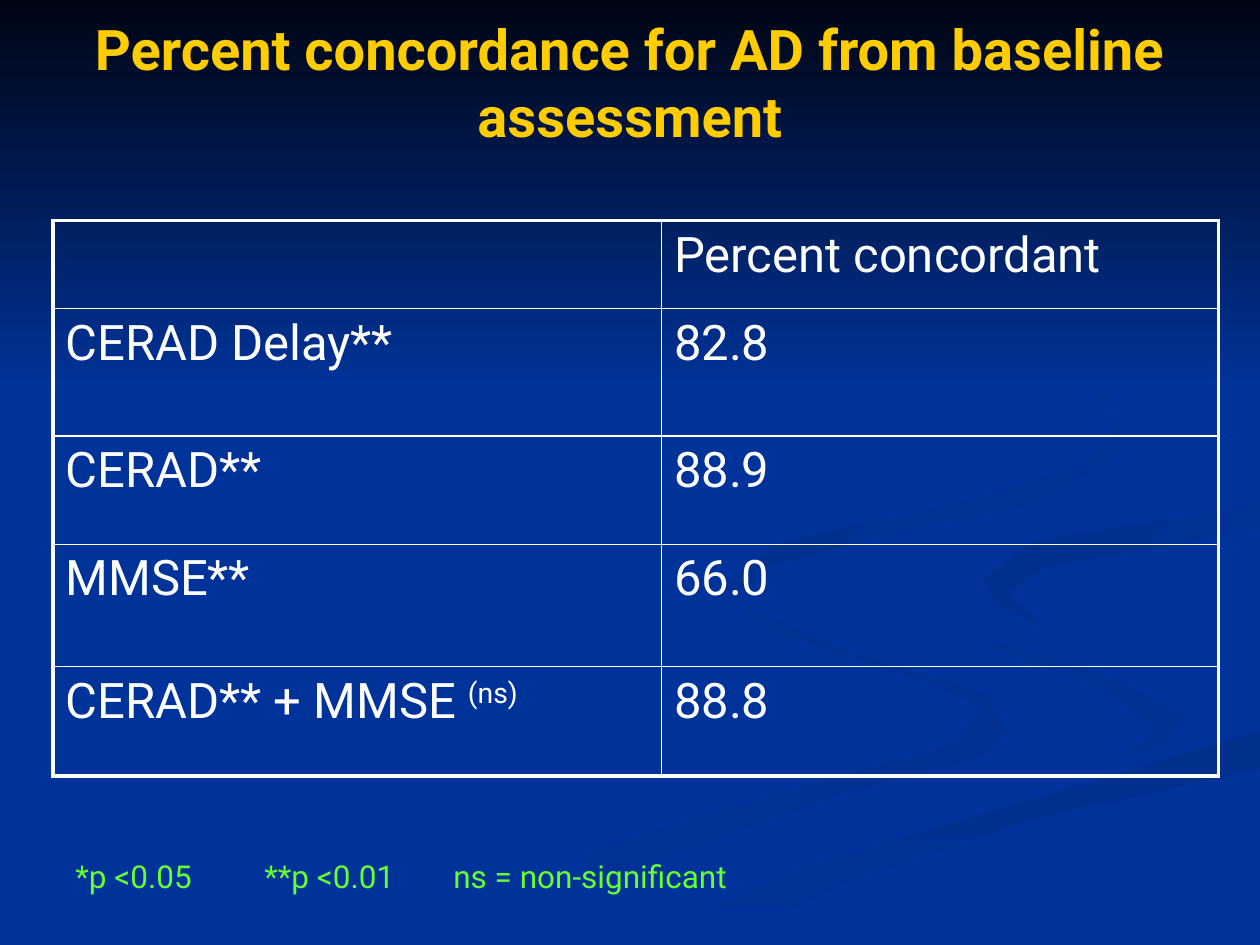
from lxml.etree import SubElement
from pptx import Presentation
from pptx.dml.color import RGBColor
from pptx.enum.text import MSO_ANCHOR, PP_ALIGN
from pptx.oxml.ns import qn
from pptx.util import Inches, Pt

NAVY = RGBColor(0x00, 0x33, 0x99)
NAVY_DIM = RGBColor(0x00, 0x31, 0x93)
NAVY_DARK = RGBColor(0x00, 0x2F, 0x8C)
MIDNIGHT = RGBColor(0x00, 0x05, 0x14)
GOLD = RGBColor(0xFF, 0xCC, 0x00)
GREEN = RGBColor(0x66, 0xFF, 0x33)
WHITE = RGBColor(0xFF, 0xFF, 0xFF)

# The slide is a grid of 100 columns and 75 rows of square units.
COLUMNS, ROWS = 100, 75
prs = Presentation()
prs.slide_width, prs.slide_height = Inches(10), Inches(7.5)
UNIT = prs.slide_width // COLUMNS
slide = prs.slides.add_slide(prs.slide_layouts[6])
slide.background.fill.solid()
slide.background.fill.fore_color.rgb = NAVY


def add_run(paragraph, text, size, color, bold=False):
    run = paragraph.add_run()
    run.text = text
    run.font.name, run.font.size, run.font.bold = "Roboto", Pt(size), bold
    run.font.color.rgb = color
    return run


def add_text_box(left, top, width, height):
    """Add a wrapping text box, placed in grid units; return its text frame."""
    box = slide.shapes.add_textbox(*(int(UNIT * n) for n in (left, top, width, height)))
    box.text_frame.word_wrap = True
    return box.text_frame


# Backdrop ribbons: start colour, end colour, clockwise gradient angle, outline
ribbons = [
    (NAVY, NAVY_DIM, 0, [
        (78, 55.3), (68, 51.9), (59.4, 48.5), (57.5, 45.9), (57, 47.2), (61, 49.5),
        (73, 53.5), (78.5, 56.2), (76, 59), (58, 63.9), (42, 69), (30, 74.9),
        (36, 74.9), (50, 68.7), (67, 63.4), (78, 60.5), (80, 58.1)]),
    (NAVY, NAVY_DIM, 45, [
        (94.3, 57), (90, 54), (77.4, 50.3), (72.4, 46.4), (74.6, 50), (88, 54.9),
        (91.8, 58.1), (89.4, 60.5), (93.2, 58.9)]),
    (NAVY_DARK, NAVY, 90, [
        (50.3, 74.9), (57, 74.9), (67, 70.2), (82, 65.1), (99.8, 60.9),
        (99.8, 58.1), (80, 63.8), (63, 69.3)]),
    (NAVY, NAVY, 0, [
        (72.5, 46.4), (76, 49.8), (89, 53.5), (94.3, 57), (91, 60), (74, 64.3),
        (57, 70.3), (47.7, 74.9), (50.3, 74.9), (63, 69.3), (80, 63.8),
        (99.9, 58.1), (99.9, 53.8), (85, 50.3), (78.1, 46.3), (82, 43.4),
        (99.9, 40.2), (99.9, 38.7), (77, 42.7)]),
    (NAVY_DARK, NAVY, 45, [
        (78.1, 46), (79, 47.8), (82.6, 49.6), (80.5, 47.2), (83, 45.3),
        (99.8, 42), (99.8, 40.2), (82, 43.4)]),
    (NAVY_DARK, NAVY, 45, [
        (68, 43), (82.5, 40.2), (88.9, 36.2), (88, 30.7), (84, 27.5), (76.2, 23.3),
        (84.6, 27.9), (88.9, 33.5), (86, 37), (76, 39.8), (62, 42.7), (57.7, 46.2),
        (62.2, 50), (59.3, 47), (61, 45)]),
    (MIDNIGHT, NAVY, 90, [(0, 0), (0, 30.8), (COLUMNS, 30.8), (COLUMNS, 0)]),
]
for start_color, end_color, angle, outline in ribbons:
    builder = slide.shapes.build_freeform(*outline[0], scale=UNIT)
    builder.add_line_segments(outline[1:], close=True)
    ribbon = builder.convert_to_shape()
    ribbon.shadow.inherit = False
    ribbon.line.fill.background()
    if start_color == end_color:
        ribbon.fill.solid()
        ribbon.fill.fore_color.rgb = start_color
        continue
    ribbon.fill.gradient()
    ribbon.fill.gradient_angle = -angle % 360  # python-pptx turns counter-clockwise
    for stop, color in zip(ribbon.fill.gradient_stops, (start_color, end_color)):
        stop.color.rgb = color

title = add_text_box(5, 3, 90, 7)
title.vertical_anchor = MSO_ANCHOR.MIDDLE
title.paragraphs[0].alignment = PP_ALIGN.CENTER
add_run(title.paragraphs[0], "Percent concordance for AD from baseline assessment",
        32, GOLD, bold=True)

measures = [
    ("", "Percent concordant"),
    ("CERAD Delay**", "82.8"),
    ("CERAD**", "88.9"),
    ("MMSE**", "66.0"),
    ("CERAD** + MMSE ", "88.8"),
]
column_widths = [48.3, 44.2]
row_heights = [7, 10.1, 8.6, 9.7, 8.7]
concordance = slide.shapes.add_table(
    len(row_heights), len(column_widths), int(UNIT * 4.2), int(UNIT * 17.5),
    int(UNIT * sum(column_widths)), int(UNIT * sum(row_heights))).table
concordance.first_row = concordance.horz_banding = False
for column, width in zip(concordance.columns, column_widths):
    column.width = int(UNIT * width)
for row, height in zip(concordance.rows, row_heights):
    row.height = int(UNIT * height)

last_row, last_column = len(row_heights) - 1, len(column_widths) - 1
for r, measure in enumerate(measures):
    for c, entry in enumerate(measure):
        cell = concordance.cell(r, c)
        if entry:
            add_run(cell.text_frame.paragraphs[0], entry, 28, WHITE)
        # Borders come before the fill in the cell properties
        on_edge = {"a:lnL": c == 0, "a:lnR": c == last_column,
                   "a:lnT": r == 0, "a:lnB": r == last_row}
        for side, outer in on_edge.items():
            border = SubElement(cell._tc.get_or_add_tcPr(), qn(side),
                                w=str(int(Pt(2.25 if outer else 1))))
            paint = SubElement(border, qn("a:solidFill"))
            SubElement(paint, qn("a:srgbClr"), val=str(WHITE))
        cell.fill.background()
combined = concordance.cell(last_row, 0).text_frame.paragraphs[0]
not_significant = add_run(combined, "(ns)", 28, WHITE)
not_significant.font._element.set("baseline", "30000")

legend = add_text_box(5, 67.5, 88.3, 4)
add_run(legend.paragraphs[0], "*p <0.05\t\t**p <0.01\tns = non-significant", 18, GREEN)

prs.save("out.pptx")
